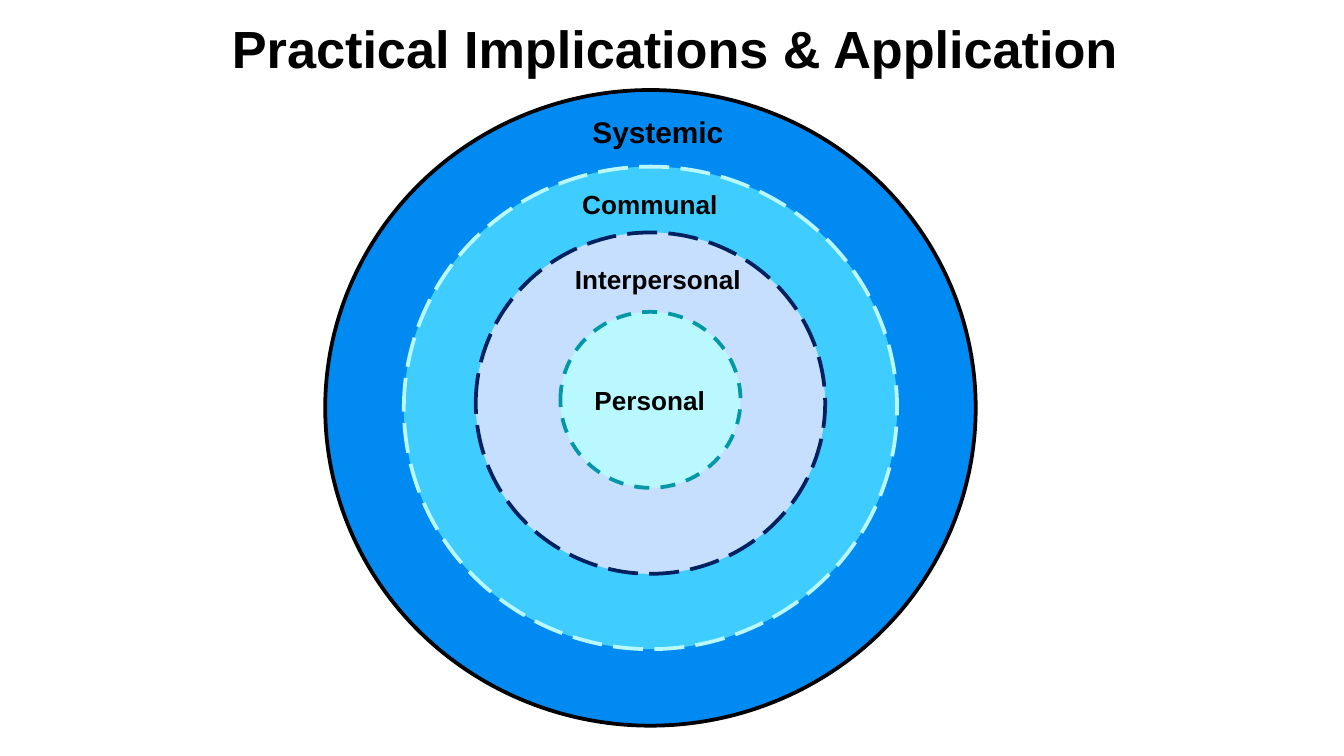
from dataclasses import dataclass

from pptx import Presentation
from pptx.dml.color import RGBColor
from pptx.enum.dml import MSO_LINE
from pptx.enum.shapes import MSO_SHAPE
from pptx.enum.text import MSO_ANCHOR, PP_ALIGN
from pptx.util import Inches, Pt

OVAL = MSO_SHAPE.OVAL
SOLID, DASH, LONG = MSO_LINE.SOLID, MSO_LINE.DASH, MSO_LINE.LONG_DASH
CENTER, TOP, MIDDLE = PP_ALIGN.CENTER, MSO_ANCHOR.TOP, MSO_ANCHOR.MIDDLE


@dataclass(frozen=True)
class Theme:
    font: str = "Arial"
    ink: str = "000000"
    blue: str = "008AF2"
    sky: str = "3FCDFF"
    mist: str = "C6DFFE"
    ice: str = "BAF8FF"
    navy: str = "002060"
    teal: str = "0097A7"
    title: int = 28
    large: int = 16
    label: int = 14
    line: int = 2


class Deck:
    def __init__(self, slide, theme):
        self.slide = slide
        self.theme = theme

    def ring(self, axis, top, width, height, fill, edge, dash):
        """Draw an ellipse centred on the vertical line at axis."""
        oval = self.slide.shapes.add_shape(
            OVAL, Inches(axis - width / 2), Inches(top),
            Inches(width), Inches(height))
        oval.shadow.inherit = False
        oval.fill.solid()
        oval.fill.fore_color.rgb = RGBColor.from_string(fill)
        oval.line.color.rgb = RGBColor.from_string(edge)
        oval.line.width = Pt(self.theme.line)
        oval.line.dash_style = dash

    def text(self, words, left, top, width, height, size, anchor=TOP):
        box = self.slide.shapes.add_textbox(
            Inches(left), Inches(top), Inches(width), Inches(height))
        frame = box.text_frame
        frame.word_wrap = True
        frame.vertical_anchor = anchor
        para = frame.paragraphs[0]
        para.text = words
        para.alignment = CENTER
        para.font.name = self.theme.font
        para.font.size = Pt(size)
        para.font.bold = True
        para.font.color.rgb = RGBColor.from_string(self.theme.ink)


def main():
    prs = Presentation()
    prs.slide_width = Inches(10)
    prs.slide_height = prs.slide_width * 9 // 16
    look = Theme()
    deck = Deck(prs.slides.add_slide(prs.slide_layouts[6]), look)

    axis = 4.84
    rings = [
        (0.67, 4.84, 4.73, look.blue, look.ink, SOLID),
        (1.24, 3.67, 3.59, look.sky, look.ice, LONG),
        (1.73, 2.60, 2.54, look.mist, look.navy, LONG),
        (2.32, 1.34, 1.31, look.ice, look.teal, DASH),
    ]
    for ring in rings:
        deck.ring(axis, *ring)

    deck.text("Practical Implications & Application",
              0.02, 0.04, 10, 0.63, look.title, MIDDLE)
    labels = [
        ("Personal", 4.23, 2.81, 1.21, 0.34, look.label),
        ("Interpersonal", 4.10, 1.91, 1.59, 0.34, look.label),
        ("Communal", 4.04, 1.35, 1.59, 0.34, look.label),
        ("Systemic", 4.10, 0.80, 1.59, 0.37, look.large),
    ]
    for label in labels:
        deck.text(*label)

    prs.save("out.pptx")


if __name__ == "__main__":
    main()
